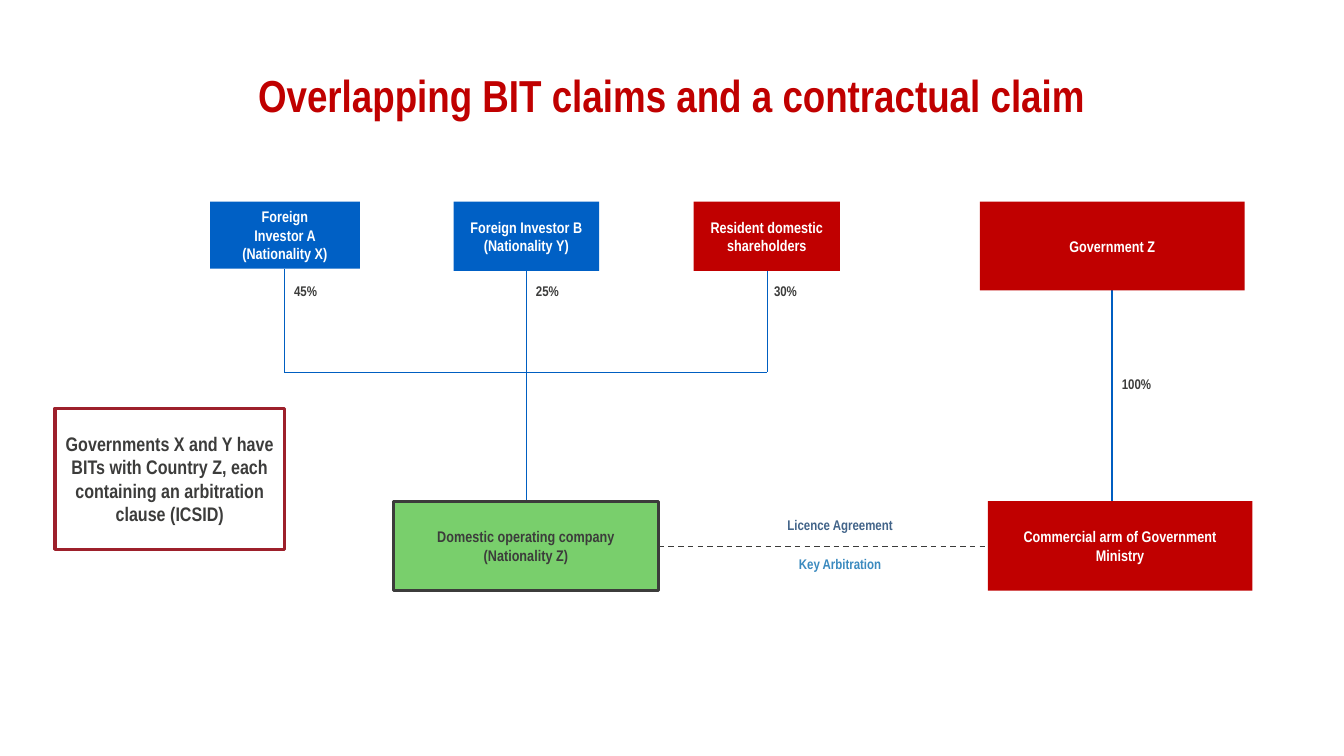
"""Build the slide on overlapping BIT claims and a contractual claim."""
from dataclasses import dataclass
from typing import Optional

from lxml.etree import SubElement
from pptx import Presentation
from pptx.dml.color import RGBColor
from pptx.enum.dml import MSO_LINE_DASH_STYLE as Dash
from pptx.enum.shapes import MSO_CONNECTOR_TYPE as Connector
from pptx.enum.shapes import MSO_SHAPE as Shape
from pptx.enum.text import MSO_ANCHOR as Anchor
from pptx.enum.text import PP_ALIGN as Align
from pptx.oxml.ns import qn
from pptx.util import Pt

FONT = "Arial Narrow"
COLORS = {
    "red": "C00000", "blue": "0060C5", "green": "79CF6C", "white": "FFFFFF",
    "ink": "3C3C3B", "wire": "005EC1", "dash": "3B3B3A", "crimson": "9D202B",
    "licence": "426489", "arbitration": "3B8ABF",
}


@dataclass
class Box:
    left: float
    top: float
    width: float
    height: float
    lines: tuple[str, ...]
    fill: Optional[str] = None
    color: str = "white"
    border: Optional[str] = None
    border_width: float = 0
    size: float = 11
    inset: float = 7.2


@dataclass
class Label:
    left: float
    top: float
    width: float
    height: float
    text: str
    color: str = "ink"
    size: float = 10
    align: Align = Align.CENTER
    inset: float = 3.6


@dataclass
class Wire:
    start: tuple[float, float]
    end: tuple[float, float]
    color: str = "wire"
    width: float = 0.75
    dashed: bool = False


ROW_TOP, LOWER_TOP, BUS = 144, 358, 266
INVESTOR_A, INVESTOR_B, RESIDENT, STATE = 203, 375.8, 548, 794.3
OPERATOR_TOP_RIGHT, LINK = 470.5, 390.2

BOXES = [
    Box(150, ROW_TOP, 107, 48, ("Foreign", "Investor A (Nationality X)"), "blue"),
    Box(324, ROW_TOP, 104, 49.5, ("Foreign Investor B", "(Nationality Y)"), "blue"),
    Box(495.5, ROW_TOP, 104.5, 49.5, ("Resident domestic shareholders",), "red"),
    Box(700, ROW_TOP, 189, 63.5, ("Government Z",), "red"),
    Box(281.2, LOWER_TOP, 189, 64, ("Domestic operating company", "(Nationality Z)"),
        "green", "ink", "ink", 2),
    Box(705.6, LOWER_TOP, 189, 64, ("Commercial arm of Government Ministry",), "red"),
    Box(39.3, 291.5, 164, 101,
        ("Governments X and Y have BITs with Country Z, each containing an "
         "arbitration clause (ICSID)",),
        None, "ink", "crimson", 2.25, 14, 6.5),
]

LABELS = [
    Label(0, 41.8, 960, 49.7, "Overlapping BIT claims and a contractual claim",
          "red", 32, inset=6.5),
    Label(INVESTOR_A, 198, 42, 19.4, "45%", align=Align.LEFT),
    Label(INVESTOR_B, 198, 42, 19.4, "25%", align=Align.LEFT),
    Label(545.8, 198, 42, 19.4, "30%", align=Align.LEFT),
    Label(STATE, 264.5, 50, 19.4, "100%", align=Align.LEFT),
    Label(530, 365.5, 140, 19.4, "Licence Agreement", "licence"),
    Label(530, 393.3, 140, 19.4, "Key Arbitration", "arbitration"),
]

WIRES = [
    Wire((INVESTOR_A, 192), (INVESTOR_A, BUS)),
    Wire((INVESTOR_B, 193.5), (INVESTOR_B, LOWER_TOP)),
    Wire((RESIDENT, 193.5), (RESIDENT, BUS)),
    Wire((INVESTOR_A, BUS), (RESIDENT, BUS)),
    Wire((STATE, 207.5), (STATE, LOWER_TOP)),
    Wire((OPERATOR_TOP_RIGHT, LINK), (705.6, LINK), "dash", 1, True),
]


def rgb(name: str) -> RGBColor:
    return RGBColor.from_string(COLORS[name])


def write(frame, lines: tuple[str, ...], size: float, color: str, align: Align) -> None:
    frame.word_wrap = True
    for index, line in enumerate(lines):
        para = frame.add_paragraph() if index else frame.paragraphs[0]
        para.alignment = align
        span = para.add_run()
        span.text = line
        span.font.name = FONT
        span.font.size = Pt(size)
        span.font.bold = True
        span.font.color.rgb = rgb(color)


def draw_box(page, item: Box) -> None:
    box = page.shapes.add_shape(Shape.RECTANGLE, Pt(item.left), Pt(item.top),
                                Pt(item.width), Pt(item.height))
    box.shadow.inherit = False
    if item.fill:
        box.fill.solid()
        box.fill.fore_color.rgb = rgb(item.fill)
    else:
        box.fill.background()
    if item.border:
        box.line.color.rgb = rgb(item.border)
        box.line.width = Pt(item.border_width)
    else:
        box.line.fill.background()
    frame = box.text_frame
    frame.vertical_anchor = Anchor.MIDDLE
    frame.margin_left = frame.margin_right = Pt(item.inset)
    write(frame, item.lines, item.size, item.color, Align.CENTER)


def draw_label(page, item: Label) -> None:
    box = page.shapes.add_textbox(Pt(item.left), Pt(item.top),
                                  Pt(item.width), Pt(item.height))
    frame = box.text_frame
    frame.margin_top = frame.margin_bottom = Pt(item.inset)
    write(frame, (item.text,), item.size, item.color, item.align)


def draw_wire(page, item: Wire) -> None:
    wire = page.shapes.add_connector(Connector.STRAIGHT, *map(Pt, item.start + item.end))
    wire.line.color.rgb = rgb(item.color)
    wire.line.width = Pt(item.width)
    if item.dashed:
        wire.line.dash_style = Dash.DASH
    SubElement(wire._element.spPr, qn("a:effectLst"))


def main() -> None:
    deck = Presentation()
    deck.slide_width, deck.slide_height = Pt(960), Pt(540)
    page = deck.slides.add_slide(deck.slide_layouts[6])
    for wire in WIRES:
        draw_wire(page, wire)
    for box in BOXES:
        draw_box(page, box)
    for label in LABELS:
        draw_label(page, label)
    deck.save("out.pptx")


if __name__ == "__main__":
    main()
